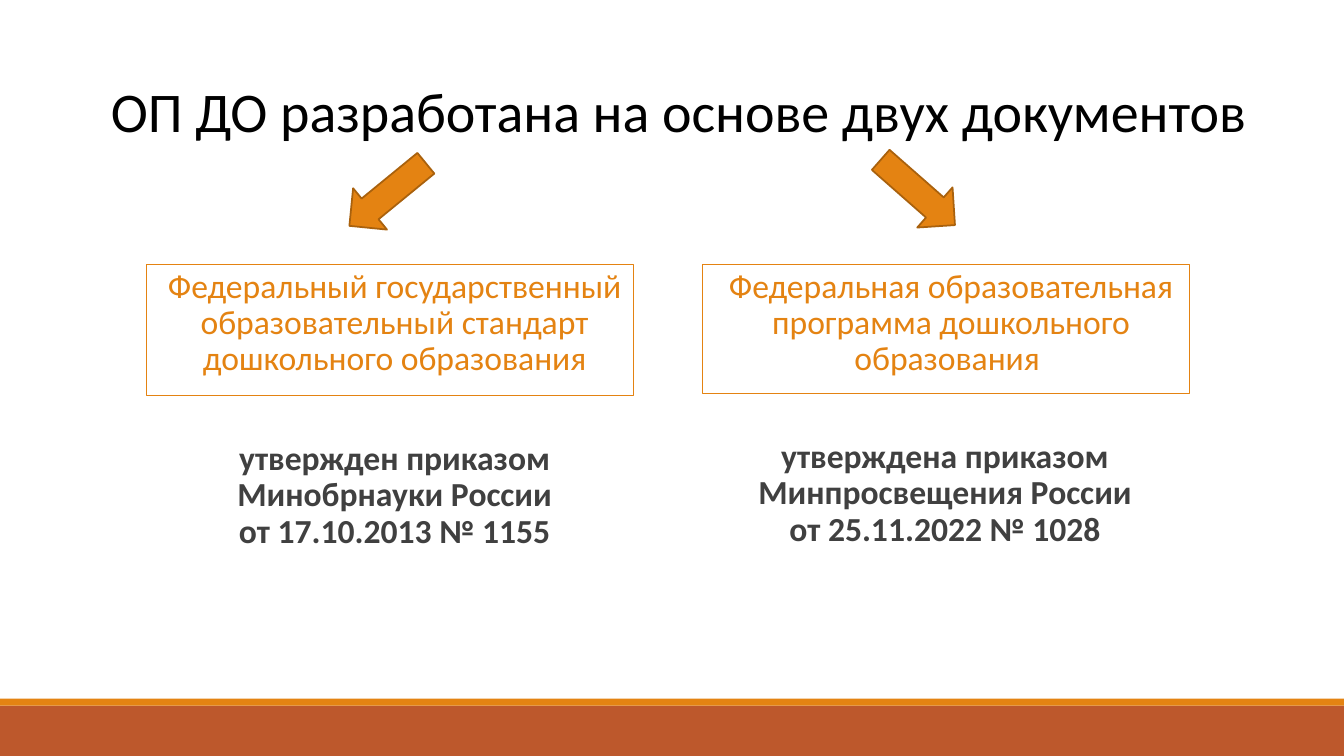
from lxml import etree
from pptx import Presentation
from pptx.dml.color import RGBColor
from pptx.enum.shapes import MSO_SHAPE
from pptx.enum.text import MSO_ANCHOR, MSO_AUTO_SIZE, PP_ALIGN
from pptx.oxml.ns import qn
from pptx.util import Pt

RECT, DOWN_ARROW = MSO_SHAPE.RECTANGLE, MSO_SHAPE.DOWN_ARROW
TOP, NO_FIT = MSO_ANCHOR.TOP, MSO_AUTO_SIZE.NONE
LEFT, CENTER = PP_ALIGN.LEFT, PP_ALIGN.CENTER

ORANGE = RGBColor(0xE4, 0x83, 0x12)
DARK_ORANGE = RGBColor(0xA9, 0x61, 0x0D)
RUST = RGBColor(0xBD, 0x58, 0x2C)
GRAY = RGBColor(0x40, 0x40, 0x40)
BLACK = RGBColor(0, 0, 0)

COMPARISON_LAYOUT = 4
WIDTH, HEIGHT = 960, 540


def place(s, left, top, width, height):
    s.left, s.top, s.width, s.height = Pt(left), Pt(top), Pt(width), Pt(height)


def add_block(s, fill, box, line=None, rotation=0):
    sp = s.shapes.add_shape(*box[:1], *(Pt(v) for v in box[1:]))
    sp.shadow.inherit = False
    sp.fill.solid()
    sp.fill.fore_color.rgb = fill
    sp.rotation = rotation
    if line is None:
        sp.line.fill.background()
    else:
        sp.line.color.rgb = line
        sp.line.width = Pt(1.25)


def write(sp, lines, size, color, bold=False, align=LEFT):
    tf = sp.text_frame
    tf.word_wrap = True
    tf.auto_size = NO_FIT
    tf.vertical_anchor = TOP
    p = tf.paragraphs[0]
    p.alignment = align
    for i, line in enumerate(lines):
        if i:
            p.add_line_break()
        r = p.add_run()
        r.text = line
        r.font.name = "Calibri"
        r.font.size = Pt(size)
        r.font.bold = bold
        r.font.color.rgb = color
    return p


def write_item(sp, box, lines, color, bold=False):
    place(sp, *box)
    tf = sp.text_frame
    tf.margin_left = tf.margin_right = 0
    tf.margin_top = tf.margin_bottom = Pt(3.6)
    p = write(sp, lines, 24, color, bold, CENTER)
    p.line_spacing = 0.9
    p.space_before, p.space_after = Pt(12), Pt(2)
    # Hanging indent with a blank bullet
    pPr = p._p.get_or_add_pPr()
    pPr.set("marL", str(Pt(7.2)))
    pPr.set("indent", str(-Pt(7.2)))
    clr = etree.SubElement(pPr, qn("a:buClr"))
    etree.SubElement(clr, qn("a:srgbClr"), val=str(ORANGE))
    etree.SubElement(pPr, qn("a:buChar"), char=" ")


def frame(sp):
    sp.line.color.rgb = ORANGE
    sp.line.width = Pt(0.75)


def main():
    prs = Presentation()
    prs.slide_width, prs.slide_height = Pt(WIDTH), Pt(HEIGHT)
    s = prs.slides.add_slide(prs.slide_layouts[COMPARISON_LAYOUT])
    ph = {sp.placeholder_format.idx: sp for sp in s.placeholders}

    # Footer bands
    add_block(s, RUST, (RECT, 0, 504, WIDTH, 36))
    add_block(s, ORANGE, (RECT, 0, 499, WIDTH, 5))

    # Title
    place(ph[0], 72, 51.1, 837.4, 55.4)
    write(ph[0], ["ОП ДО разработана на основе двух документов"], 40, BLACK)

    # Documents: framed name above, approving order below
    documents = [
        (1, (104.4, 188.6, 347.8, 94),
         "Федеральный государственный образовательный стандарт "
         "дошкольного образования",
         2, (104.4, 311.8, 347.8, 103.7),
         ["утвержден приказом Минобрнауки России", "от 17.10.2013 № 1155"]),
        (3, (501.8, 188.6, 347.8, 92.5),
         "Федеральная образовательная программа дошкольного образования ",
         4, (501.1, 310.3, 340.6, 103.7),
         ["утверждена приказом Минпросвещения России", "от 25.11.2022 № 1028"]),
    ]
    for name_idx, name_box, name, order_idx, order_box, order in documents:
        write_item(ph[name_idx], name_box, [name], ORANGE)
        frame(ph[name_idx])
        write_item(ph[order_idx], order_box, order, GRAY, bold=True)

    # Arrows from the title to the documents
    for left, top, rotation in [(257.8, 103.7, 50.7), (636.5, 102.2, 311.3)]:
        add_block(s, ORANGE, (DOWN_ARROW, left, top, 38.2, 70.6),
                  DARK_ORANGE, rotation)

    prs.save("out.pptx")


if __name__ == "__main__":
    main()
